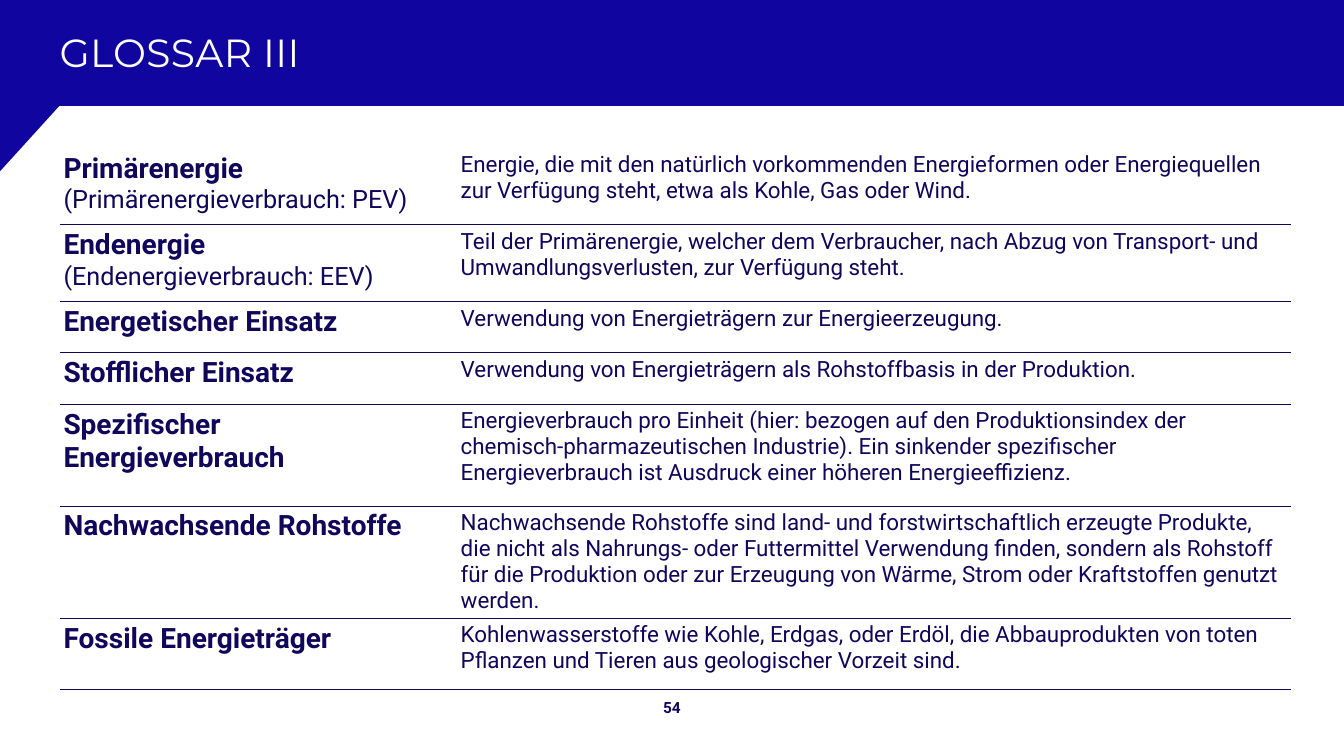
from typing import NamedTuple

from lxml.etree import SubElement
from pptx import Presentation
from pptx.dml.color import RGBColor
from pptx.enum.text import MSO_ANCHOR, MSO_AUTO_SIZE, PP_ALIGN
from pptx.oxml import parse_xml
from pptx.oxml.ns import nsdecls, qn
from pptx.util import Inches, Pt

BAND_BLUE = RGBColor(0x10, 0x06, 0x9F)
INK = RGBColor(0x10, 0x06, 0x5A)
WHITE = RGBColor(0xFF, 0xFF, 0xFF)
LEFT = 0.59
COLUMN_WIDTHS = (3.94, 8.27)
RULE_WIDTH = 0.59
LAST_RULE_WIDTH = 1.18


class Entry(NamedTuple):
    """A glossary row: bold term lines, optional detail, definition and height."""

    term: tuple[str, ...]
    definition: str
    height: float
    detail: str = ""


ENTRIES = (
    Entry(("Primärenergie",),
          "Energie, die mit den natürlich vorkommenden Energieformen oder Energiequellen "
          "zur Verfügung steht, etwa als Kohle, Gas oder Wind.",
          0.76, "(Primärenergieverbrauch: PEV)"),
    Entry(("Endenergie",),
          "Teil der Primärenergie, welcher dem Verbraucher, nach Abzug von Transport- und "
          "Umwandlungsverlusten, zur Verfügung steht.",
          0.76, "(Endenergieverbrauch: EEV)"),
    Entry(("Energetischer Einsatz",),
          "Verwendung von Energieträgern zur Energieerzeugung.", 0.51),
    Entry(("Stofflicher Einsatz",),
          "Verwendung von Energieträgern als Rohstoffbasis in der Produktion.", 0.51),
    Entry(("Spezifischer", "Energieverbrauch"),
          "Energieverbrauch pro Einheit (hier: bezogen auf den Produktionsindex der "
          "chemisch-pharmazeutischen Industrie). Ein sinkender spezifischer "
          "Energieverbrauch ist Ausdruck einer höheren Energieeffizienz.", 1.01),
    Entry(("Nachwachsende Rohstoffe",),
          "Nachwachsende Rohstoffe sind land- und forstwirtschaftlich erzeugte Produkte, "
          "die nicht als Nahrungs- oder Futtermittel Verwendung finden, sondern als "
          "Rohstoff für die Produktion oder zur Erzeugung von Wärme, Strom oder "
          "Kraftstoffen genutzt werden.", 1.06),
    Entry(("Fossile Energieträger",),
          "Kohlenwasserstoffe wie Kohle, Erdgas, oder Erdöl, die Abbauprodukten von toten "
          "Pflanzen und Tieren aus geologischer Vorzeit sind.", 0.71),
)


def write_text(paragraph, text: str, *, size: float, font: str = "Roboto",
               color: RGBColor = INK, bold: bool = False, align=PP_ALIGN.LEFT):
    """Append a formatted run to a paragraph and return it."""
    paragraph.alignment = align
    run = paragraph.add_run()
    run.text = text
    run.font.name = font
    run.font.size = Pt(size)
    run.font.bold = bold
    run.font.color.rgb = color
    return run


def set_frame(frame, vertical_inset: float) -> None:
    """Centre a text frame vertically and give it its insets."""
    frame.word_wrap = True
    frame.auto_size = MSO_AUTO_SIZE.NONE
    frame.vertical_anchor = MSO_ANCHOR.MIDDLE
    frame.margin_left = frame.margin_right = 0
    frame.margin_top = frame.margin_bottom = Inches(vertical_inset)


def draw_header_band(slide) -> None:
    """Draw the blue header band with its slanted lower left corner."""
    corners = ((13.33, 0), (13.33, 1.05), (LEFT, 1.05), (0, 1.7))
    builder = slide.shapes.build_freeform(0, 0)
    builder.add_line_segments([(Inches(x), Inches(y)) for x, y in corners])
    band = builder.convert_to_shape()
    band.shadow.inherit = False
    band.fill.solid()
    band.fill.fore_color.rgb = BAND_BLUE
    band.line.fill.background()


def set_borders(cell, top: float, bottom: float) -> None:
    """Rule a cell above and below; a width of zero leaves the side open."""
    properties = cell._tc.get_or_add_tcPr()
    widths = {"lnL": 0, "lnR": 0, "lnT": top, "lnB": bottom}
    for index, (side, width) in enumerate(widths.items()):
        border = parse_xml(f'<a:{side} {nsdecls("a")} w="{Pt(width)}"/>')
        if width:
            fill = SubElement(border, qn("a:solidFill"))
            SubElement(fill, qn("a:srgbClr"), val=str(INK))
        else:
            SubElement(border, qn("a:noFill"))
        properties.insert(index, border)


def fill_term(frame, entry: Entry) -> None:
    """Write the bold term and its lighter detail line."""
    for index, line in enumerate(entry.term):
        paragraph = frame.add_paragraph() if index else frame.paragraphs[0]
        write_text(paragraph, line, size=20, bold=True)
    if entry.detail:
        paragraph.add_line_break()
        write_text(paragraph, entry.detail, size=18)


def draw_glossary(slide) -> None:
    """Draw the table of terms and definitions."""
    height = sum(entry.height for entry in ENTRIES)
    table = slide.shapes.add_table(
        len(ENTRIES), len(COLUMN_WIDTHS), Inches(LEFT), Inches(1.47),
        Inches(sum(COLUMN_WIDTHS)), Inches(height)).table
    table.first_row = table.horz_banding = False
    for column, width in zip(table.columns, COLUMN_WIDTHS):
        column.width = Inches(width)
    last = len(ENTRIES) - 1
    for index, (row, entry) in enumerate(zip(table.rows, ENTRIES)):
        row.height = Inches(entry.height)
        for cell in row.cells:
            cell.fill.background()
            cell.margin_left = cell.margin_right = Inches(0.04)
            cell.margin_top = cell.margin_bottom = Inches(0.04)
            set_borders(cell, RULE_WIDTH if index else 0,
                        LAST_RULE_WIDTH if index == last else RULE_WIDTH)
        term_cell, definition_cell = row.cells
        fill_term(term_cell.text_frame, entry)
        write_text(definition_cell.text_frame.paragraphs[0], entry.definition, size=16)


def draw_page_number(slide) -> None:
    """Write the page number at the foot of the slide."""
    box = slide.shapes.add_textbox(Inches(6.37), Inches(6.88), Inches(0.59), Inches(0.28))
    set_frame(box.text_frame, 0)
    write_text(box.text_frame.paragraphs[0], "54", size=11, bold=True,
               align=PP_ALIGN.CENTER)


def format_title(slide) -> None:
    """Place the title in front of the header band."""
    title = slide.shapes.title
    title.left, title.top = Inches(LEFT), Inches(0.02)
    title.width, title.height = Inches(12.2), Inches(0.98)
    set_frame(title.text_frame, 0.04)
    run = write_text(title.text_frame.paragraphs[0], "GLOSSAR III", size=28,
                     font="Montserrat", color=WHITE)
    run.font._element.set("spc", "30")
    title.element.getparent().append(title.element)


def main() -> None:
    """Build and save the glossary slide."""
    presentation = Presentation()
    presentation.slide_width = Inches(13.33)
    presentation.slide_height = Inches(7.5)
    slide = presentation.slides.add_slide(presentation.slide_layouts[5])
    draw_header_band(slide)
    draw_page_number(slide)
    draw_glossary(slide)
    format_title(slide)
    presentation.save("out.pptx")


if __name__ == "__main__":
    main()
